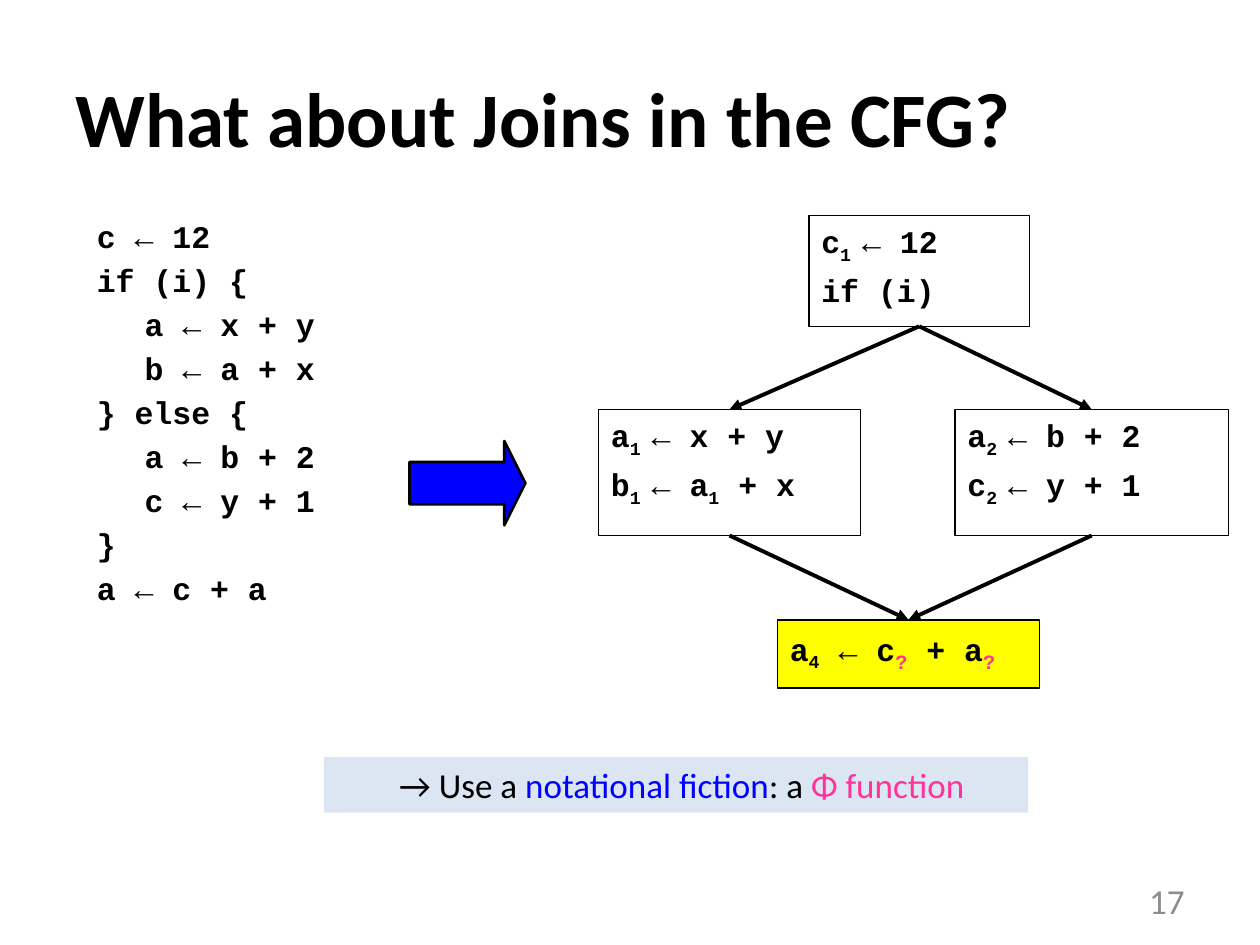
from dataclasses import dataclass

from lxml.etree import SubElement
from pptx import Presentation
from pptx.dml.color import RGBColor
from pptx.enum.shapes import MSO_CONNECTOR, MSO_SHAPE
from pptx.enum.text import MSO_ANCHOR, PP_ALIGN
from pptx.oxml.ns import qn
from pptx.util import Inches, Pt


@dataclass(frozen=True)
class Theme:
    heading_font: str = "Calibri"
    code_font: str = "Courier New"
    ink: str = "000000"
    muted: str = "8C8C8C"
    blue: str = "0000FF"
    pink: str = "FF3399"
    yellow: str = "FFFF00"
    pale_blue: str = "DCE6F2"
    title_size: int = 44
    body_size: int = 20
    code_size: int = 18
    indent: float = 0.38


BOTTOM, TOP = 2, 0


class SlideBuilder:
    def __init__(self, slide, theme):
        self.slide = slide
        self.theme = theme

    def format_run(self, run, size, color, font, bold=False):
        run.font.size = Pt(size)
        run.font.color.rgb = RGBColor.from_string(color)
        run.font.name = font
        run.font.bold = bold

    def text_box(self, left, top, width, height, anchor=MSO_ANCHOR.TOP):
        box = self.slide.shapes.add_textbox(
            Inches(left), Inches(top), Inches(width), Inches(height))
        box.text_frame.word_wrap = True
        box.text_frame.vertical_anchor = anchor
        return box.text_frame

    def label(self, text, bounds, size, color, bold=False, align=PP_ALIGN.LEFT):
        frame = self.text_box(*bounds, anchor=MSO_ANCHOR.MIDDLE)
        frame.text = text
        paragraph = frame.paragraphs[0]
        paragraph.alignment = align
        self.format_run(paragraph.runs[0], size, color,
                        self.theme.heading_font, bold)

    def shape(self, kind, bounds, fill=None, line_width=None):
        shape = self.slide.shapes.add_shape(kind, *map(Inches, bounds))
        shape.shadow.inherit = False
        if fill:
            shape.fill.solid()
            shape.fill.fore_color.rgb = RGBColor.from_string(fill)
        else:
            shape.fill.background()
        if line_width:
            shape.line.color.rgb = RGBColor.from_string(self.theme.ink)
            shape.line.width = Pt(line_width)
        else:
            shape.line.fill.background()
        shape.text_frame.word_wrap = True
        shape.text_frame.vertical_anchor = MSO_ANCHOR.TOP
        return shape

    def code(self, frame, lines):
        """Write code lines; _x_ is a subscript and a leading > nests a line."""
        theme = self.theme
        for number, line in enumerate(lines):
            paragraph = frame.paragraphs[0] if number == 0 else frame.add_paragraph()
            paragraph.alignment = PP_ALIGN.LEFT
            properties = paragraph._p.get_or_add_pPr()
            properties.set("marL", str(Inches(theme.indent)))
            hanging = 0 if line.startswith(">") else -Inches(theme.indent)
            properties.set("indent", str(hanging))
            space_before = SubElement(properties, qn("a:spcBef"))
            SubElement(space_before, qn("a:spcPct"), val="20000")
            for index, part in enumerate(line.lstrip(">").split("_")):
                if not part:
                    continue
                run = paragraph.add_run()
                run.text = part
                unknown = part == "?"
                self.format_run(run, theme.body_size if unknown else theme.code_size,
                                theme.pink if unknown else theme.ink,
                                theme.code_font, bold=True)
                if index % 2:
                    run.font._element.set("baseline", "-25000")

    def block(self, bounds, lines, fill=None):
        block = self.shape(MSO_SHAPE.RECTANGLE, bounds, fill, line_width=0.75)
        self.code(block.text_frame, lines)
        return block

    def edge(self, source, target):
        edge = self.slide.shapes.add_connector(MSO_CONNECTOR.STRAIGHT, 0, 0, 0, 0)
        edge.begin_connect(source, BOTTOM)
        edge.end_connect(target, TOP)
        edge.line.color.rgb = RGBColor.from_string(self.theme.ink)
        edge.line.width = Pt(2.25)
        SubElement(edge.line._get_or_add_ln(), qn("a:tailEnd"), type="triangle")
        SubElement(edge._element.spPr, qn("a:effectLst"))

    def banner(self, bounds, parts):
        banner = self.shape(MSO_SHAPE.RECTANGLE, bounds, self.theme.pale_blue)
        paragraph = banner.text_frame.paragraphs[0]
        paragraph.alignment = PP_ALIGN.LEFT
        paragraph.level = 1
        properties = paragraph._p.get_or_add_pPr()
        properties.set("marL", str(Inches(0.5)))
        properties.set("indent", "0")
        for text, color in parts:
            run = paragraph.add_run()
            run.text = text
            self.format_run(run, self.theme.body_size, color,
                            self.theme.heading_font)


def main():
    presentation = Presentation()
    presentation.slide_width = Inches(10)
    presentation.slide_height = Inches(7.5)
    theme = Theme()
    slide = presentation.slides.add_slide(presentation.slide_layouts[6])
    builder = SlideBuilder(slide, theme)

    # Title and slide number
    builder.label("What about Joins in the CFG?", (0.5, 0.3, 9, 1.25),
                  theme.title_size, theme.ink, bold=True)
    builder.label("17", (7.17, 6.95, 2.33, 0.4), theme.body_size, theme.muted,
                  align=PP_ALIGN.RIGHT)

    # Source program
    builder.code(builder.text_box(0.67, 1.67, 2.83, 4.67), [
        "c ← 12",
        "if (i) {",
        ">a ← x + y",
        ">b ← a + x",
        "} else {",
        ">a ← b + 2",
        ">c ← y + 1",
        "}",
        "a ← c + a",
    ])

    # Arrow from program to flow graph
    transform = builder.shape(MSO_SHAPE.RIGHT_ARROW, (3.25, 3.5, 0.92, 0.67),
                              theme.blue, line_width=1.5)
    transform.adjustments[0] = 0.5
    transform.adjustments[1] = 0.25

    # Control flow graph
    entry = builder.block((6.42, 1.71, 1.75, 0.88), ["c_1 _← 12", "if (i)"])
    then_branch = builder.block((4.75, 3.25, 2.08, 1),
                                ["a_1 _← x + y", "b_1 _← a_1_ + x"])
    else_branch = builder.block((7.58, 3.25, 2.17, 1),
                                ["a_2 _← b + 2", "c_2 _← y + 1"])
    join = builder.block((6.17, 4.92, 2.08, 0.54), ["a_4_ ← c_?_ + a_?_"],
                         theme.yellow)
    for branch in (then_branch, else_branch):
        builder.edge(entry, branch)
        builder.edge(branch, join)

    # Conclusion
    builder.banner((2.57, 6.01, 5.59, 0.44), [
        ("→ Use a ", theme.ink),
        ("notational fiction", theme.blue),
        (": a ", theme.ink),
        ("Φ function", theme.pink),
    ])

    presentation.save("out.pptx")


if __name__ == "__main__":
    main()
